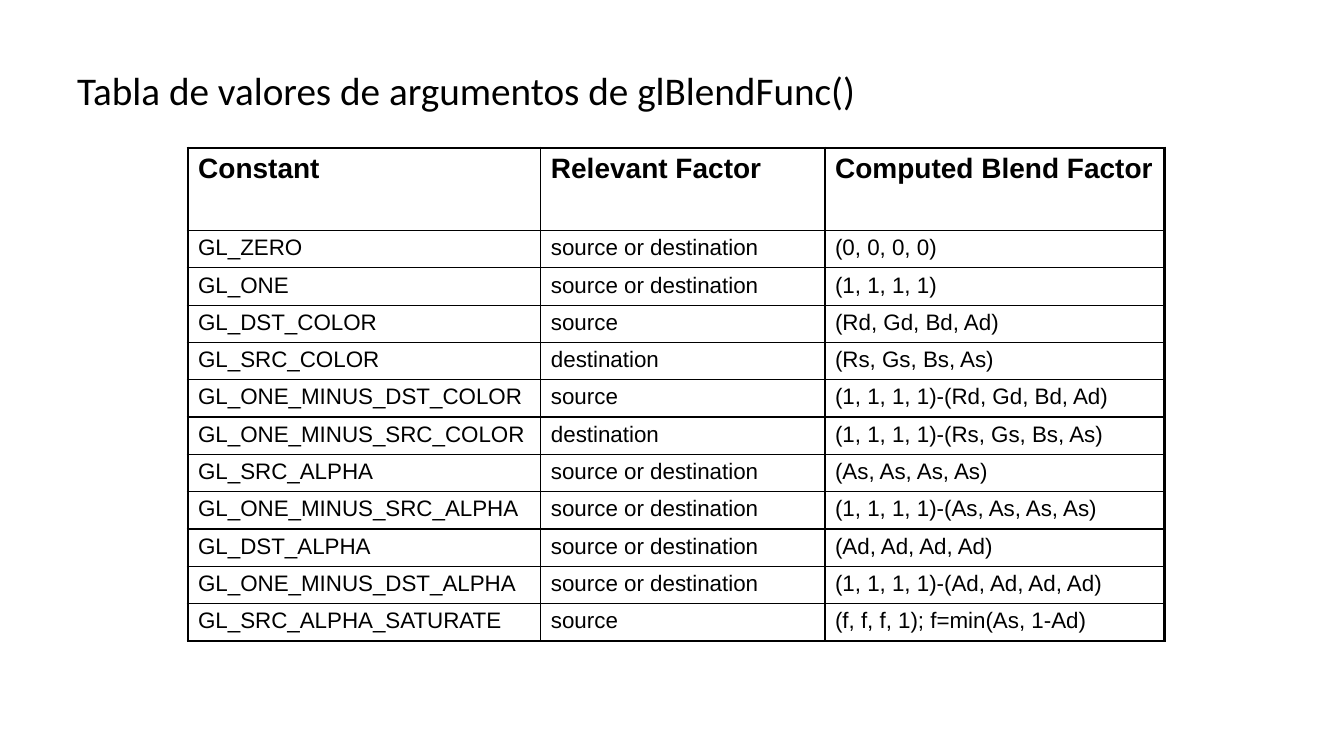
from pptx import Presentation, util as u
from pptx.dml.color import RGBColor
from pptx.enum import text
from pptx.oxml.ns import qn
from lxml import etree

HEAD = "Tabla de valores de argumentos de glBlendFunc()"
BOTH = "source or destination"
ROWS = [
    ("Constant", "Relevant Factor", "Computed Blend Factor"),
    ("GL_ZERO", BOTH, "(0, 0, 0, 0)"),
    ("GL_ONE", BOTH, "(1, 1, 1, 1)"),
    ("GL_DST_COLOR", "source", "(Rd, Gd, Bd, Ad)"),
    ("GL_SRC_COLOR", "destination", "(Rs, Gs, Bs, As)"),
    ("GL_ONE_MINUS_DST_COLOR", "source", "(1, 1, 1, 1)-(Rd, Gd, Bd, Ad)"),
    ("GL_ONE_MINUS_SRC_COLOR", "destination", "(1, 1, 1, 1)-(Rs, Gs, Bs, As)"),
    ("GL_SRC_ALPHA", BOTH, "(As, As, As, As)"),
    ("GL_ONE_MINUS_SRC_ALPHA", BOTH, "(1, 1, 1, 1)-(As, As, As, As)"),
    ("GL_DST_ALPHA", BOTH, "(Ad, Ad, Ad, Ad)"),
    ("GL_ONE_MINUS_DST_ALPHA", BOTH, "(1, 1, 1, 1)-(Ad, Ad, Ad, Ad)"),
    ("GL_SRC_ALPHA_SATURATE", "source", "(f, f, f, 1); f=min(As, 1-Ad)"),
]
WIDTHS = (8.89, 7.16, 8.56)
HIGHS = [2.08] + [0.94] * (len(ROWS) - 1)
COLORS = {"ink": "000000", "paper": "FFFFFF"}
THIN, THICK = 1, 2.25


def style(para, face, size, bold=False):
    font = para.font
    font.name, font.size, font.bold = face, u.Pt(size), bold
    font.color.rgb = RGBColor.from_string(COLORS["ink"])


def border(cell, side, width):
    props = cell._tc.get_or_add_tcPr()
    line = etree.SubElement(props, qn("a:ln" + side), w=str(u.Pt(width)))
    fill = etree.SubElement(line, qn("a:solidFill"))
    etree.SubElement(fill, qn("a:srgbClr"), val=COLORS["ink"])


def add_title(slide):
    title = slide.shapes.title
    title.left, title.top = u.Cm(1.69), u.Cm(0.76)
    title.width, title.height = u.Cm(30.48), u.Cm(3.18)
    frame = title.text_frame
    frame.text = HEAD
    frame.word_wrap = True
    frame.auto_size = text.MSO_AUTO_SIZE.NONE
    frame.vertical_anchor = text.MSO_ANCHOR.MIDDLE
    para = frame.paragraphs[0]
    para.alignment = text.PP_ALIGN.LEFT
    para.line_spacing = 0.9
    style(para, "Calibri", 28)


def add_grid(slide):
    frame = slide.shapes.add_table(
        len(ROWS), len(WIDTHS), u.Cm(4.74), u.Cm(3.73),
        u.Cm(sum(WIDTHS)), u.Cm(sum(HIGHS)))
    table = frame.table
    table.first_row = table.horz_banding = False
    for col, width in zip(table.columns, WIDTHS):
        col.width = u.Cm(width)
    for row, high in zip(table.rows, HIGHS):
        row.height = u.Cm(high)
    for r, row in enumerate(ROWS):
        for c, value in enumerate(row):
            cell = table.cell(r, c)
            cell.text = value
            top = r == 0
            style(cell.text_frame.paragraphs[0], "Arial", 20 if top else 16, top)
            edges = {"L": c == 0, "R": c == len(WIDTHS) - 1,
                     "T": top, "B": r == len(ROWS) - 1}
            for side, outer in edges.items():
                border(cell, side, THICK if outer else THIN)
            cell.fill.background()


def main():
    deck = Presentation()
    deck.slide_width, deck.slide_height = u.Cm(33.87), u.Cm(19.05)
    slide = deck.slides.add_slide(deck.slide_layouts[5])
    back = slide.background.fill
    back.solid()
    back.fore_color.rgb = RGBColor.from_string(COLORS["paper"])
    add_title(slide)
    add_grid(slide)
    deck.save("out.pptx")


if __name__ == "__main__":
    main()
